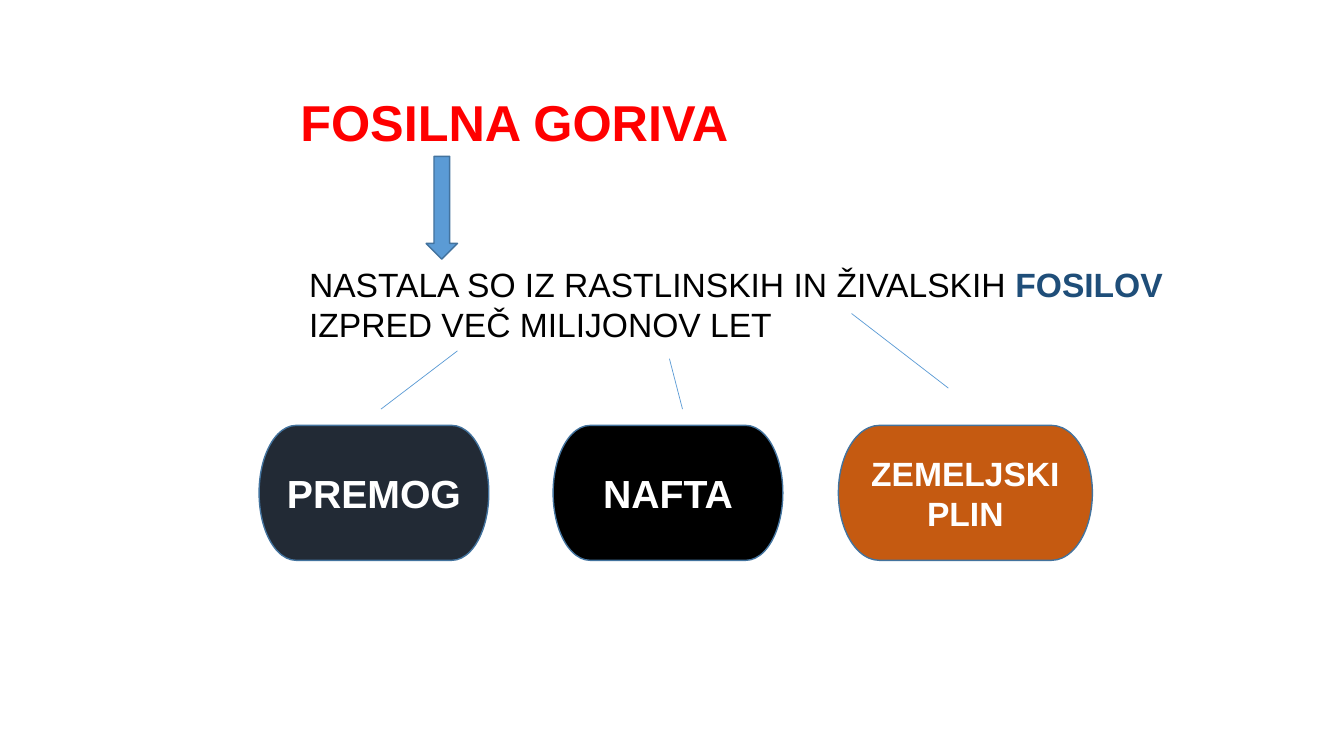
from pptx import Presentation
from pptx.dml.color import RGBColor as Rgb
from pptx.enum.shapes import MSO_CONNECTOR as Link, MSO_SHAPE as Shape
from pptx.enum.text import MSO_ANCHOR as Anchor, MSO_AUTO_SIZE as Fit, PP_ALIGN as Align
from pptx.oxml.ns import qn
from pptx.util import Cm, Pt
from lxml.etree import SubElement

# Content: places in centimetres
TITLE = "FOSILNA GORIVA"
ORIGIN = [
    ("NASTALA SO IZ RASTLINSKIH IN ŽIVALSKIH ", "text", False),
    ("FOSILOV", "key", True),
    (" IZPRED VEČ MILIJONOV LET", "text", False),
]
FUELS = [  # name, left, width, fill, type size
    ("PREMOG", 6.53, 5.79, "coal", "large"),
    ("NAFTA", 13.94, 5.79, "oil", "large"),
    ("ZEMELJSKI PLIN", 21.13, 6.4, "gas", "body"),
]
LINKS = [  # from x, y to x, y
    (9.6, 10.31, 11.53, 8.84),
    (23.9, 9.78, 21.46, 7.9),
    (17.2, 10.31, 16.87, 9.04),
]
FUEL_TOP, FUEL_HIGH = 10.72, 3.4

THEME = {
    "font": "Arial",
    "color": {
        "title": "FF0000", "text": "000000", "key": "1F4E79",
        "arrow": "5B9BD5", "edge": "43739E", "label": "FFFFFF",
        "coal": "222A35", "oil": "000000", "gas": "C55A11",
    },
    "size": {"title": 36, "large": 28, "body": 24},
}


def color(name):
    return Rgb.from_string(THEME["color"][name])


def style(para, size, tint, bold=None):
    font = para.font
    font.name = THEME["font"]
    font.size = Pt(THEME["size"][size])
    font.color.rgb = color(tint)
    font.bold = bold


def add_box(slide, *place):
    frame = slide.shapes.add_textbox(*map(Cm, place)).text_frame
    frame.word_wrap = True
    return frame


def add_form(slide, kind, fill, *place):
    form = slide.shapes.add_shape(kind, *map(Cm, place))
    form.shadow.inherit = False
    form.fill.solid()
    form.fill.fore_color.rgb = color(fill)
    form.line.color.rgb = color("edge")
    form.line.width = Pt(1)
    return form


def main():
    deck = Presentation()
    deck.slide_width, deck.slide_height = Cm(33.87), Cm(19.05)
    slide = deck.slides.add_slide(deck.slide_layouts[6])

    # Title
    para = add_box(slide, 7.14, 2.34, 18.82, 13.87).paragraphs[0]
    para.text = TITLE
    para.line_spacing = 0.9
    para.space_before = Pt(10)
    para._p.get_or_add_pPr().set("marL", str(Cm(0.18)))
    style(para, "title", "title", True)

    # Arrow down to the origin
    add_form(slide, Shape.DOWN_ARROW, "arrow", 10.74, 3.94, 0.79, 2.59)

    # Origin of the fuels
    frame = add_box(slide, 7.54, 6.53, 23.11, 2.31)
    frame.auto_size = Fit.SHAPE_TO_FIT_TEXT
    para = frame.paragraphs[0]
    style(para, "body", "text")
    for text, tint, bold in ORIGIN:
        run = para.add_run()
        run.text = text
        run.font.bold = bold
        run.font.color.rgb = color(tint)

    # Fuels
    for name, left, width, fill, size in FUELS:
        form = add_form(slide, Shape.FLOWCHART_TERMINATOR, fill,
                        left, FUEL_TOP, width, FUEL_HIGH)
        frame = form.text_frame
        frame.word_wrap = True
        frame.vertical_anchor = Anchor.MIDDLE
        para = frame.paragraphs[0]
        para.text = name
        para.alignment = Align.CENTER
        style(para, size, "label", True)

    # Lines between origin and fuels
    for ends in LINKS:
        link = slide.shapes.add_connector(Link.STRAIGHT, *map(Cm, ends))
        link.line.color.rgb = color("arrow")
        link.line.width = Pt(0.5)
        SubElement(link._element.spPr, qn("a:effectLst"))

    deck.save("out.pptx")


if __name__ == "__main__":
    main()
